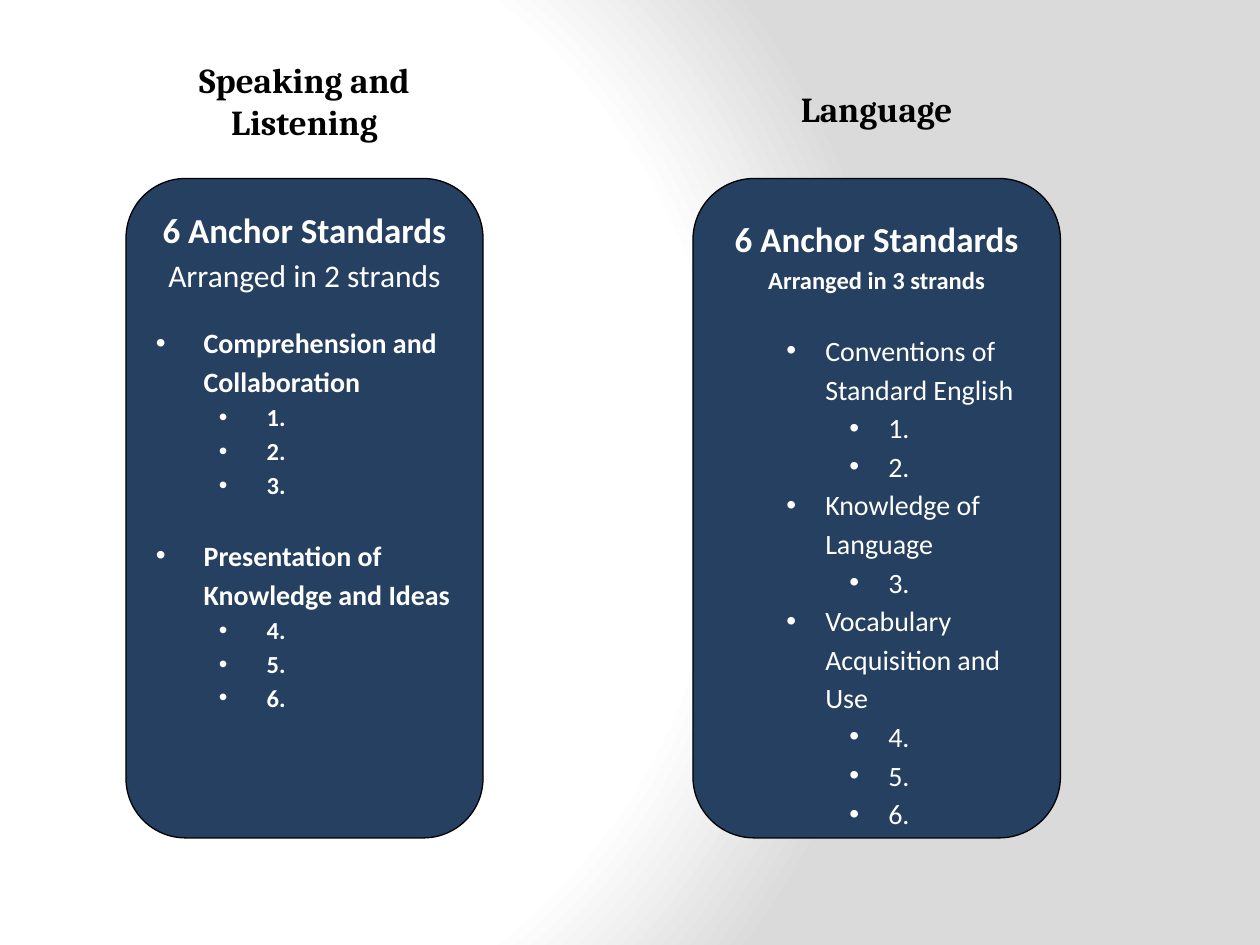
from pptx import Presentation
from pptx.dml.color import RGBColor
from pptx.enum.shapes import MSO_SHAPE as Shape
from pptx.enum.text import MSO_ANCHOR as Anchor, PP_ALIGN as Align
from pptx.oxml import parse_xml
from pptx.oxml.ns import nsdecls
from pptx.util import Inches, Pt
from lxml import etree


def tint(code):
    return RGBColor.from_string(code)


def style(run, face, size, bold, code):
    font = run.font
    font.name, font.size, font.bold = face, Pt(size), bold
    font.color.rgb = tint(code)


deck = Presentation()
deck.slide_width, deck.slide_height = Inches(10), Inches(7.5)
slide = deck.slides.add_slide(deck.slide_layouts[6])
unit = deck.slide_width / 120

stops = "".join(
    f'<a:gs pos="{share * 1000}"><a:srgbClr val="{code}"/></a:gs>'
    for share, code in [(0, "FFFFFF"), (75, "FFFFFF"), (100, "DADADA")]
)
slide.element.cSld.insert(0, parse_xml(
    f'<p:bg {nsdecls("p", "a")}><p:bgPr><a:gradFill rotWithShape="1">'
    f'<a:gsLst>{stops}</a:gsLst><a:path path="circle">'
    '<a:fillToRect l="20000" t="50000" r="100000" b="50000"/></a:path>'
    '</a:gradFill><a:effectLst/></p:bgPr></p:bg>'
))

panels = [
    dict(
        col=12, wide=34, row=5, tall=9.2, title="Speaking and Listening",
        lead=[("6 Anchor Standards ", 20, True), ("Arranged in 2 strands", 18, False)],
        sizes=(16, 14), bold=True, base=0, left=0.38, hang=0.38, gaps=(15.4, 19.6),
        strands=[("Comprehension and Collaboration", ["1.", "2.", "3."]),
                 ("Presentation of Knowledge and Ideas", ["4.", "5.", "6."])],
    ),
    dict(
        col=66, wide=35, row=7.7, tall=5.3, title="Language",
        lead=[("6 Anchor Standards", 20, True), (" ", 24, True),
              ("Arranged in 3 strands", 14, True)],
        sizes=(16, 16), bold=False, base=1, left=0.81, hang=0.31, gaps=(19.6, 0, 0),
        strands=[("Conventions of Standard English", ["1.", "2."]),
                 ("Knowledge of Language", ["3."]),
                 ("Vocabulary Acquisition and Use", ["4.", "5.", "6."])],
    ),
]

for panel in panels:
    left, width = int(panel["col"] * unit), int(panel["wide"] * unit)
    head = slide.shapes.add_textbox(
        left, int(panel["row"] * unit), width, int(panel["tall"] * unit))
    frame = head.text_frame
    frame.word_wrap = True
    frame.text = panel["title"]
    frame.paragraphs[0].alignment = Align.CENTER
    style(frame.paragraphs[0].runs[0], "Cambria", 20, True, "000000")

    card = slide.shapes.add_shape(
        Shape.ROUNDED_RECTANGLE, left, int(17 * unit), width, int(62.8 * unit))
    card.shadow.inherit = False
    card.fill.solid()
    card.fill.fore_color.rgb = tint("254061")
    card.line.color.rgb = tint("000000")
    card.line.width = Pt(0.75)
    frame = card.text_frame
    frame.word_wrap = True
    frame.vertical_anchor = Anchor.TOP

    lead = frame.paragraphs[0]
    lead.alignment, lead.line_spacing = Align.CENTER, 1.15
    for text, size, bold in panel["lead"]:
        run = lead.add_run()
        run.text = text
        style(run, "Calibri", size, bold, "FFFFFF")

    for (strand, marks), gap in zip(panel["strands"], panel["gaps"]):
        rows = [(0, strand, gap)] + [(1, mark, 0) for mark in marks]
        for depth, text, space in rows:
            para = frame.add_paragraph()
            para.text = text
            para.level = panel["base"] + depth
            para.alignment, para.line_spacing = Align.LEFT, 1.15
            para.space_before = Pt(space)
            style(para.runs[0], "Calibri", panel["sizes"][depth], panel["bold"], "FFFFFF")
            props = para._p.get_or_add_pPr()
            props.set("marL", str(Inches(panel["left"] + depth / 2)))
            props.set("indent", str(-Inches(panel["hang"])))
            props.append(parse_xml(f'<a:buFont {nsdecls("a")} typeface="Arial"/>'))
            etree.SubElement(props, props[-1].tag.replace("buFont", "buChar"), char="•")

deck.save("out.pptx")
